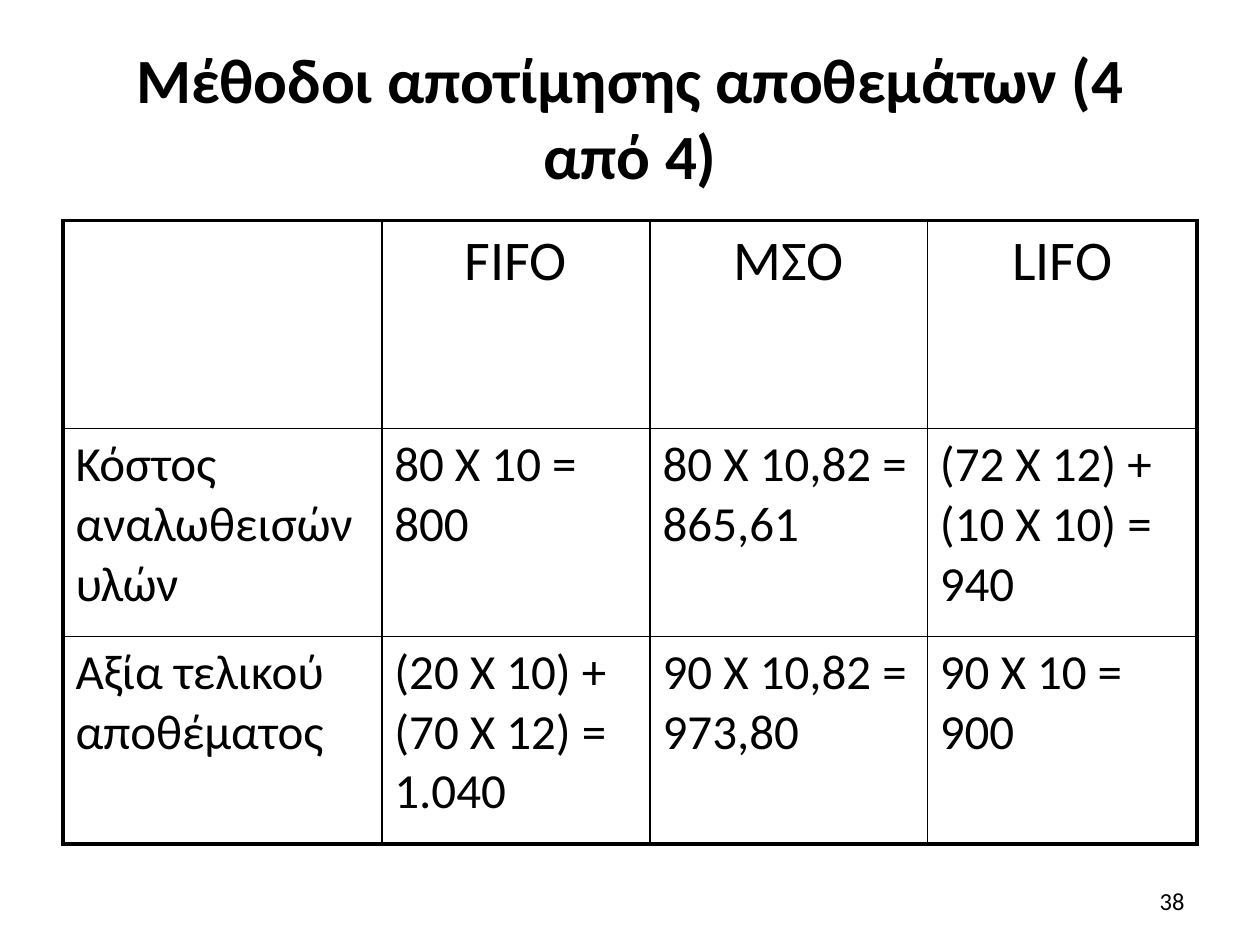
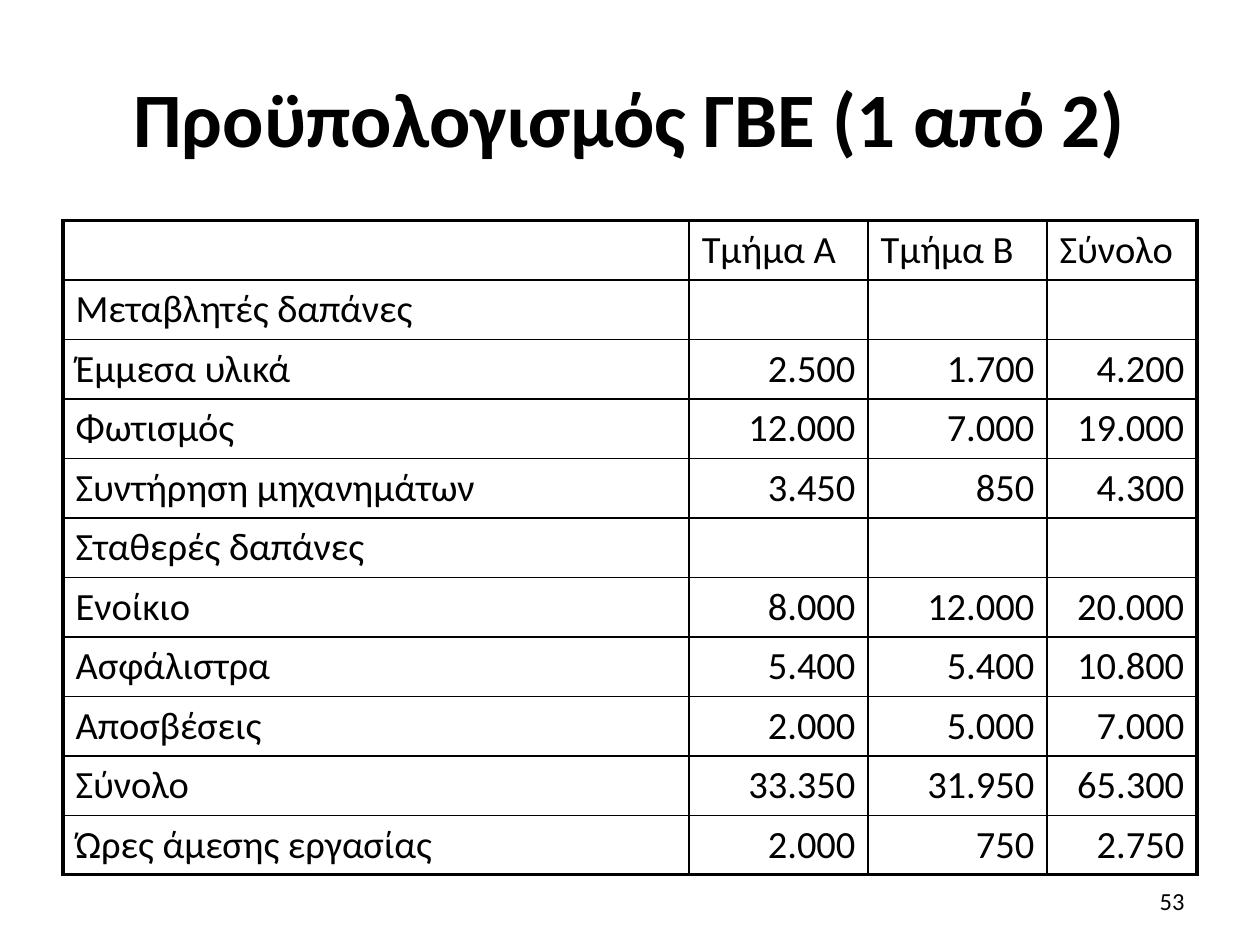
from dataclasses import dataclass

from lxml import etree
from pptx import Presentation, util as u
from pptx.dml.color import RGBColor
from pptx.enum import text as t
from pptx.oxml import ns

# Shared look
INK = RGBColor(0x00, 0x00, 0x00)
FACE = "Calibri"
WIDE, TALL = u.Inches(10), u.Inches(7.5)
THIN, THICK = u.Pt(1), u.Pt(2.25)
LEFT, CENTER, RIGHT = t.PP_ALIGN.LEFT, t.PP_ALIGN.CENTER, t.PP_ALIGN.RIGHT


@dataclass(frozen=True)
class Box:
    """Place and size as shares of the slide."""
    x: float
    y: float
    w: float
    h: float

    def spot(self) -> tuple[int, int, int, int]:
        return (int(WIDE * self.x), int(TALL * self.y),
                int(WIDE * self.w), int(TALL * self.h))


@dataclass(frozen=True)
class Style:
    size: float
    align: t.PP_ALIGN = LEFT
    bold: bool = False


@dataclass(frozen=True)
class Page:
    title: str
    size: float
    number: int
    cols: tuple[float, ...]  # widths in inches
    row: float               # height in inches
    head: Style
    label: Style
    value: Style
    rows: tuple[tuple[str, ...], ...]


TITLE = Box(0.05, 0.04, 0.9, 1 / 6)
GRID = Box(0.05, 1.75 / 7.5, 0.9, 0.66)
NUMBER = Box(0.717, 6.95 / 7.5, 0.233, 0.4 / 7.5)

PAGES = (
    Page("Μέθοδοι αποτίμησης αποθεμάτων (4 από 4)", 36, 38,
         (2.53, 2.13, 2.2, 2.14), 1.65,
         Style(32, CENTER), Style(28), Style(28), (
             ("", "FIFO", "ΜΣΟ", "LIFO"),
             ("Κόστος αναλωθεισών υλών", "80 Χ 10 = 800",
              "80 Χ 10,82 = 865,61", "(72 Χ 12) + (10 Χ 10) = 940"),
             ("Αξία τελικού αποθέματος", "(20 Χ 10) + (70 Χ 12) = 1.040",
              "90 Χ 10,82 = 973,80", "90 Χ 10 = 900"),
         )),
    Page("Προϋπολογισμός ΓΒΕ (1 από 2)", 44, 53,
         (4.97, 1.42, 1.42, 1.19), 0.45,
         Style(22), Style(22), Style(22, RIGHT), (
             ("", "Τμήμα Α", "Τμήμα Β", "Σύνολο"),
             ("Μεταβλητές δαπάνες", "", "", ""),
             ("Έμμεσα υλικά", "2.500", "1.700", "4.200"),
             ("Φωτισμός", "12.000", "7.000", "19.000"),
             ("Συντήρηση μηχανημάτων", "3.450", "850", "4.300"),
             ("Σταθερές δαπάνες", "", "", ""),
             ("Ενοίκιο", "8.000", "12.000", "20.000"),
             ("Ασφάλιστρα", "5.400", "5.400", "10.800"),
             ("Αποσβέσεις", "2.000", "5.000", "7.000"),
             ("Σύνολο", "33.350", "31.950", "65.300"),
             ("Ώρες άμεσης εργασίας", "2.000", "750", "2.750"),
         )),
)


def write(frame, words: str, style: Style) -> None:
    frame.text = words
    para = frame.paragraphs[0]
    para.alignment = style.align
    font = para.font
    font.name, font.size, font.bold = FACE, u.Pt(style.size), style.bold
    font.color.rgb = INK


def place(shape, box: Box, words: str, style: Style) -> None:
    shape.left, shape.top, shape.width, shape.height = box.spot()
    frame = shape.text_frame
    frame.word_wrap = True
    frame.auto_size = t.MSO_AUTO_SIZE.NONE
    frame.vertical_anchor = t.MSO_ANCHOR.MIDDLE
    write(frame, words, style)


def edge(cell, side: str, width: int) -> None:
    props = cell._tc.get_or_add_tcPr()
    line = etree.SubElement(props, ns.qn(f"a:ln{side}"), w=str(width))
    fill = etree.SubElement(line, ns.qn("a:solidFill"))
    etree.SubElement(fill, ns.qn("a:srgbClr"), val=str(INK))


def draw_grid(slide, page: Page) -> None:
    high, wide = len(page.rows), len(page.cols)
    table = slide.shapes.add_table(high, wide, *GRID.spot()).table
    table.first_row = table.horz_banding = False
    for col, width in zip(table.columns, page.cols):
        col.width = u.Inches(width)
    for r, row in enumerate(page.rows):
        table.rows[r].height = u.Inches(page.row)
        for c, words in enumerate(row):
            cell = table.cell(r, c)
            style = page.head if r == 0 else page.label if c == 0 else page.value
            write(cell.text_frame, words, style)
            # Thick lines run around the outside only
            outer = {"L": c == 0, "R": c == wide - 1,
                     "T": r == 0, "B": r == high - 1}
            for side, thick in outer.items():
                edge(cell, side, THICK if thick else THIN)
            cell.fill.background()


def draw_page(deck, page: Page) -> None:
    slide = deck.slides.add_slide(deck.slide_layouts[5])
    place(slide.shapes.title, TITLE, page.title, Style(page.size, CENTER, True))
    draw_grid(slide, page)
    place(slide.shapes.add_textbox(*NUMBER.spot()), NUMBER,
          str(page.number), Style(14, RIGHT))


def main() -> None:
    deck = Presentation()
    deck.slide_width, deck.slide_height = WIDE, TALL
    for page in PAGES:
        draw_page(deck, page)
    deck.save("out.pptx")


if __name__ == "__main__":
    main()
